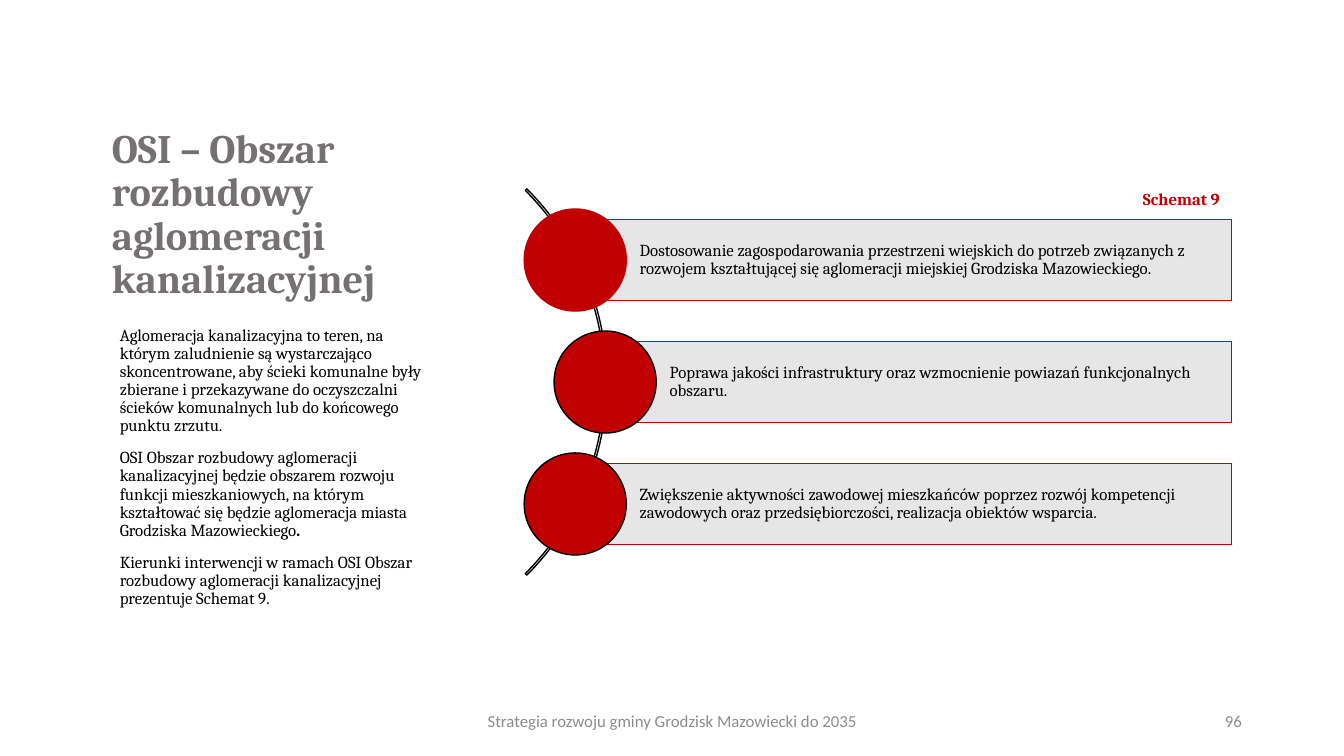
from pptx import Presentation
from pptx.dml.color import RGBColor
from pptx.enum.shapes import MSO_SHAPE
from pptx.enum.text import MSO_ANCHOR, MSO_AUTO_SIZE, PP_ALIGN
from pptx.util import Inches, Pt

RED = RGBColor(0xC0, 0x00, 0x00)
BLACK = RGBColor(0x00, 0x00, 0x00)
TITLE_GRAY = RGBColor(0x76, 0x71, 0x71)
FOOTER_GRAY = RGBColor(0x8C, 0x8C, 0x8C)
PANEL_GRAY = RGBColor(0xE7, 0xE6, 0xE6)

LEFT, CENTER, RIGHT = PP_ALIGN.LEFT, PP_ALIGN.CENTER, PP_ALIGN.RIGHT
TOP, MIDDLE, BOTTOM = MSO_ANCHOR.TOP, MSO_ANCHOR.MIDDLE, MSO_ANCHOR.BOTTOM
RECTANGLE, OVAL, ARC = MSO_SHAPE.RECTANGLE, MSO_SHAPE.OVAL, MSO_SHAPE.BLOCK_ARC
NO_AUTOFIT = MSO_AUTO_SIZE.NONE

COLUMNS, ROWS = 40, 30
HEADING = "Cambria"
PLAIN = "Calibri"

BODY = [
    ["Aglomeracja kanalizacyjna to teren, na którym zaludnienie są wystarczająco "
     "skoncentrowane, aby ścieki komunalne były zbierane i przekazywane do oczyszczalni "
     "ścieków komunalnych lub do końcowego punktu zrzutu."],
    ["OSI Obszar rozbudowy aglomeracji kanalizacyjnej będzie obszarem rozwoju funkcji "
     "mieszkaniowych, na którym kształtować się będzie aglomeracja miasta Grodziska "
     "Mazowieckiego", "."],
    ["Kierunki interwencji w ramach OSI Obszar rozbudowy aglomeracji kanalizacyjnej "
     "prezentuje Schemat 9."],
]
DIRECTIONS = [
    (17.12, RED, "Dostosowanie zagospodarowania przestrzeni wiejskich do potrzeb związanych "
     "z rozwojem kształtującej się aglomeracji miejskiej Grodziska Mazowieckiego."),
    (18.01, BLACK, "Poprawa jakości infrastruktury oraz wzmocnienie powiazań "
     "funkcjonalnych obszaru."),
    (17.12, BLACK, "Zwiększenie aktywności zawodowej mieszkańców poprzez rozwój kompetencji "
     "zawodowych oraz przedsiębiorczości, realizacja obiektów wsparcia."),
]
PANEL_RIGHT, PANEL_TOP, PANEL_HEIGHT, PANEL_PITCH = 36.66, 8.72, 3.2, 4.84
CIRCLE_WIDTH, CIRCLE_HEIGHT = 3.04, 4.05


class SlideBuilder:
    """Places styled elements on the current slide by grid columns and rows."""

    def __init__(self, deck):
        self.column = deck.slide_width / COLUMNS
        self.row = deck.slide_height / ROWS
        self.page = deck.slides.add_slide(deck.slide_layouts[5])

    def place(self, left, top, width, height):
        return (round(left * self.column), round(top * self.row),
                round(width * self.column), round(height * self.row))

    def fill_text(self, box, paragraphs, color, size=12, name=HEADING, bold=False,
                  align=LEFT, anchor=TOP, spacing=None, gap=0):
        frame = box.text_frame
        frame.word_wrap = True
        frame.auto_size = NO_AUTOFIT
        frame.vertical_anchor = anchor
        for index, spans in enumerate(paragraphs):
            para = frame.add_paragraph() if index else frame.paragraphs[0]
            para.alignment = align
            para.line_spacing = spacing
            para.space_before = Pt(gap if index else 0)
            font = para.font
            font.name, font.size, font.bold = name, Pt(size), bold
            font.color.rgb = color
            for position, text in enumerate(spans):
                for number, line in enumerate(text.split("\n")):
                    if number:
                        para.add_line_break()
                    span = para.add_run()
                    span.text = line
                    if position:
                        span.font.bold = True

    def title(self, area, text):
        box = self.page.shapes.title
        box.left, box.top, box.width, box.height = self.place(*area)
        self.fill_text(box, [[text]], TITLE_GRAY, size=28.8, bold=True,
                       anchor=BOTTOM, spacing=0.9)

    def text(self, area, paragraphs, color, **style):
        box = self.page.shapes.add_textbox(*self.place(*area))
        self.fill_text(box, paragraphs, color, **style)

    def shape(self, kind, area, line, fill=None):
        shape = self.page.shapes.add_shape(kind, *self.place(*area))
        shape.shadow.inherit = False
        if fill is None:
            shape.fill.background()
        else:
            shape.fill.solid()
            shape.fill.fore_color.rgb = fill
        shape.line.color.rgb = line
        shape.line.width = Pt(1)
        return shape

    def arc(self, area):
        arc = self.shape(ARC, area, BLACK)
        for index, value in enumerate((189, 27, 0.004)):
            arc.adjustments[index] = value

    def direction(self, left, top, outline, text):
        panel = self.shape(RECTANGLE, (left, top, PANEL_RIGHT - left, PANEL_HEIGHT),
                           RED, PANEL_GRAY)
        frame = panel.text_frame
        frame.margin_left = Inches(0.64)
        frame.margin_top = frame.margin_right = frame.margin_bottom = Inches(0.03)
        self.fill_text(panel, [[text]], BLACK, anchor=MIDDLE, spacing=0.9)
        self.shape(OVAL, (left - CIRCLE_WIDTH / 2, top + (PANEL_HEIGHT - CIRCLE_HEIGHT) / 2,
                          CIRCLE_WIDTH, CIRCLE_HEIGHT), outline, RED)


def main():
    deck = Presentation()
    deck.slide_width, deck.slide_height = Inches(13.33), Inches(7.5)
    slide = SlideBuilder(deck)
    slide.title((3.03, 5.2, 10.71, 7), "OSI – Obszar rozbudowy\naglomeracji kanalizacyjnej")
    slide.text((3.27, 12.76, 9.78, 14.52), BODY, BLACK, spacing=0.9, gap=10)
    slide.arc((1.8, 4.32, 16.26, 21.68))
    for index, (left, outline, text) in enumerate(DIRECTIONS):
        slide.direction(left, PANEL_TOP + index * PANEL_PITCH, outline, text)
    slide.text((30.96, 7.28, 5.64, 1.2), [["Schemat 9"]], RED, bold=True, align=RIGHT)
    slide.text((13.26, 27.8, 13.5, 1.6),
               [["Strategia rozwoju gminy Grodzisk Mazowiecki do 2035"]],
               FOOTER_GRAY, name=PLAIN, align=CENTER, anchor=MIDDLE)
    slide.text((28.26, 27.8, 9, 1.6), [["96"]], FOOTER_GRAY, name=PLAIN,
               align=RIGHT, anchor=MIDDLE)
    deck.save("out.pptx")


if __name__ == "__main__":
    main()
